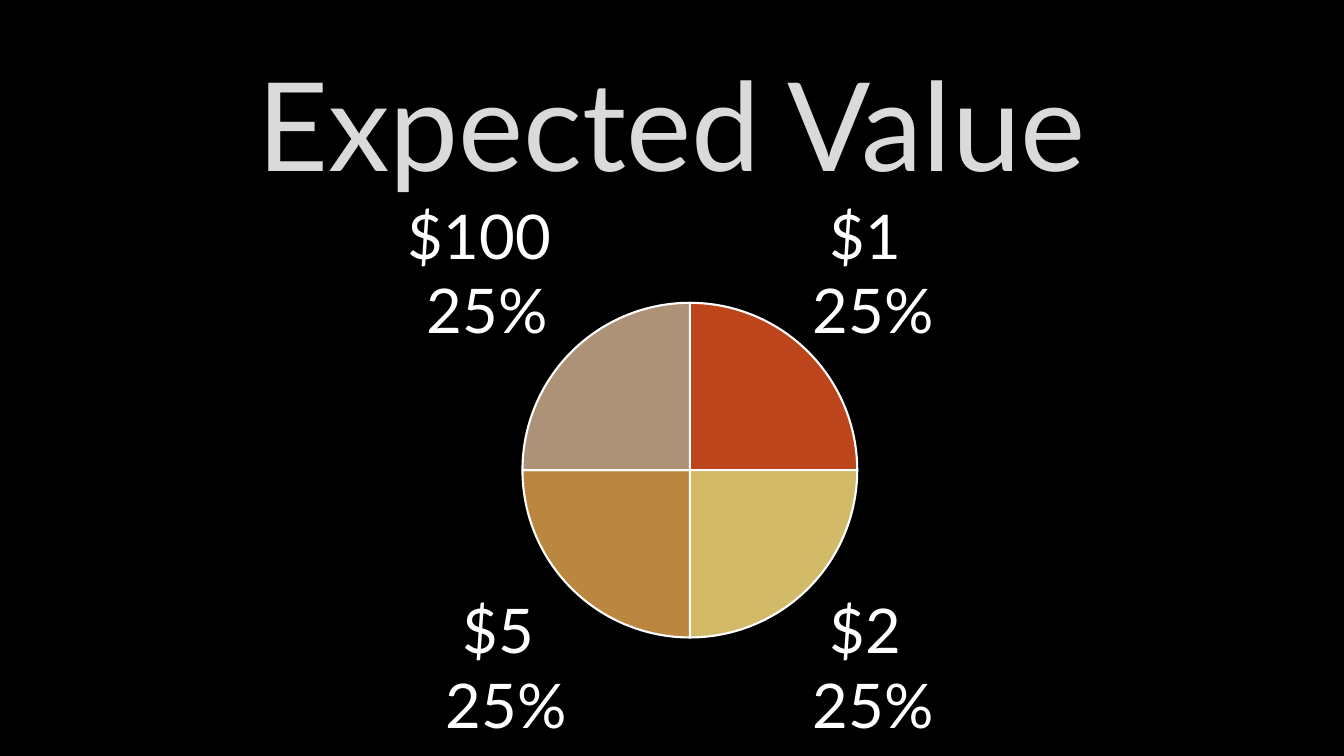
from lxml import etree
from pptx import Presentation
from pptx.chart.data import CategoryChartData
from pptx.dml.color import RGBColor
from pptx.enum.chart import XL_CHART_TYPE as ChartType, XL_LABEL_POSITION as LabelPosition
from pptx.enum.text import MSO_ANCHOR as Anchor, PP_ALIGN as Align
from pptx.oxml import parse_xml
from pptx.oxml.ns import nsdecls, qn
from pptx.util import Inches, Pt

FONT = "Lato"
WHITE = "FFFFFF"
DOLLARS = '"$"#,##0_);[Red]\\("$"#,##0\\)'
PRIZES = [(1, "BC451B"), (2, "D3BA68"), (5, "BB8640"), (100, "AD9277")]
CHANCE = 25


def rgb(colour):
    return RGBColor.from_string(colour)


def set_font(font, size, colour):
    font.name = FONT
    font.size = Pt(size)
    font.color.rgb = rgb(colour)


def outline_text(paragraph, colour, width):
    line = parse_xml(
        f'<a:ln {nsdecls("a")} w="{Pt(width)}"><a:solidFill><a:srgbClr val="{colour}">'
        '<a:alpha val="90000"/></a:srgbClr></a:solidFill></a:ln>')
    paragraph.runs[0].font._element.insert(0, line)


def add_title(slide, text):
    title = slide.shapes.title
    title.left, title.top = Inches(1.5), Inches(0)
    title.width, title.height = Inches(10.32), Inches(2)
    title.text_frame.text = text
    title.text_frame.vertical_anchor = Anchor.BOTTOM
    heading = title.text_frame.paragraphs[0]
    heading.alignment = Align.CENTER
    set_font(heading.font, 88, "DADADA")
    outline_text(heading, "404040", 0.75)


def place_plot(chart, x, y, w, h):
    """Fix the inner plot area, in fractions of the chart."""
    plot_area = chart._chartSpace.chart.plotArea
    for old in plot_area.findall(qn("c:layout")):
        plot_area.remove(old)
    layout = etree.Element(qn("c:layout"))
    manual = etree.SubElement(layout, qn("c:manualLayout"))
    settings = {"layoutTarget": "inner", "xMode": "edge", "yMode": "edge",
                "x": x, "y": y, "w": w, "h": h}
    for tag, value in settings.items():
        etree.SubElement(manual, qn(f"c:{tag}"), val=str(value))
    plot_area.insert(0, layout)


def add_prize_pie(slide):
    prizes = CategoryChartData(number_format="General")
    prizes.categories = [prize for prize, _ in PRIZES]
    prizes.categories.number_format = DOLLARS
    prizes.add_series("Series 1", [CHANCE] * len(PRIZES))
    chart = slide.shapes.add_chart(
        ChartType.PIE, Inches(2.22), Inches(1.7), Inches(8.89), Inches(5.93), prizes).chart
    chart.has_legend = False
    chart.has_title = False
    set_font(chart.font, 10, WHITE)
    place_plot(chart, 0.33, 0.22, 0.38, 0.56)

    pie = chart.plots[0]
    pie.vary_by_categories = True
    for index, (_, colour) in enumerate(PRIZES):
        wedge = pie.series[0].points[index].format
        wedge.fill.solid()
        wedge.fill.fore_color.rgb = rgb(colour)
        wedge.line.color.rgb = rgb(WHITE)
        wedge.line.width = Pt(1.5)

    labels = pie.series[0].data_labels
    labels.show_value = False
    labels.show_category_name = True
    labels.show_percentage = True
    labels.number_format = "0%"
    labels.number_format_is_linked = False
    labels.position = LabelPosition.OUTSIDE_END
    set_font(labels.font, 44, WHITE)


def main():
    deck = Presentation()
    deck.slide_width, deck.slide_height = Inches(13.33), Inches(7.5)
    slide = deck.slides.add_slide(deck.slide_layouts[0])
    slide.background.fill.solid()
    slide.background.fill.fore_color.rgb = rgb("000000")
    subtitle = slide.placeholders[1].element
    subtitle.getparent().remove(subtitle)
    add_prize_pie(slide)
    add_title(slide, "Expected Value")
    deck.save("out.pptx")


if __name__ == "__main__":
    main()
